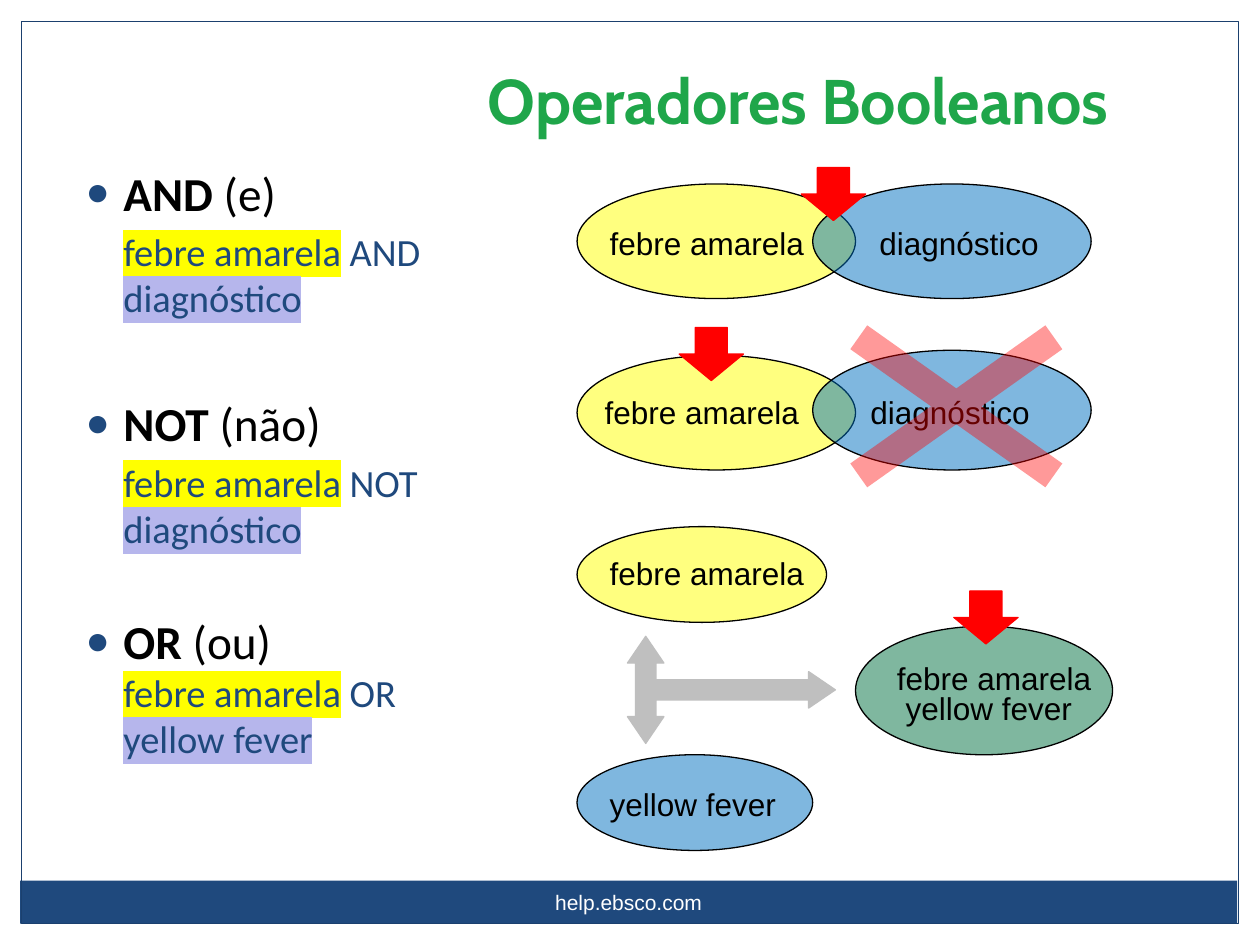
from typing import NamedTuple, Optional

from lxml.etree import SubElement
from pptx import Presentation
from pptx.dml.color import RGBColor
from pptx.enum.shapes import MSO_SHAPE as Preset
from pptx.enum.text import MSO_ANCHOR as Anchor, MSO_AUTO_SIZE as AutoSize, PP_ALIGN as Align
from pptx.oxml.ns import qn
from pptx.util import Emu, Pt

PX_PER_INCH = 100
YELLOW, BLUE, GREEN = "FFFF00", "0070C0", "7FB79F"
NAVY, RED, GREY, BLACK, WHITE = "1F497D", "FF0000", "BFBFBF", "000000", "FFFFFF"
LILAC = "B6B6EC"


class Figure(NamedTuple):
    preset: Preset
    box: tuple[int, int, int, int]
    fill: Optional[str]
    line: Optional[str]
    opacity: int = 100
    adjustments: tuple[float, ...] = ()
    rotation: int = 0


class Label(NamedTuple):
    text: str
    left: int
    top: int
    width: int


class Operator(NamedTuple):
    name: str
    meaning: str
    second_term: str
    gap_before: int
    example_gap: float
    break_before_second: bool


def px(length: int) -> Emu:
    return Emu(length * 914400 // PX_PER_INCH)


def rgb(color: str) -> RGBColor:
    return RGBColor.from_string(color)


def set_font(font, name: str, size: int, color: str) -> None:
    font.name, font.size = name, Pt(size)
    font.color.rgb = rgb(color)


def place(shape, box: tuple[int, int, int, int]) -> None:
    shape.left, shape.top, shape.width, shape.height = map(px, box)


def draw_figure(slide, figure: Figure):
    shape = slide.shapes.add_shape(figure.preset, *map(px, figure.box))
    shape.shadow.inherit = False
    shape.rotation = figure.rotation
    for index, value in enumerate(figure.adjustments):
        shape.adjustments[index] = value
    if figure.fill:
        shape.fill.solid()
        shape.fill.fore_color.rgb = rgb(figure.fill)
        if figure.opacity < 100:
            color = shape.fill._xPr.find(".//" + qn("a:srgbClr"))
            SubElement(color, qn("a:alpha"), val=str(figure.opacity * 1000))
    else:
        shape.fill.background()
    if figure.line:
        shape.line.color.rgb = rgb(figure.line)
        shape.line.width = Pt(0.75)
    else:
        shape.line.fill.background()
    return shape


def draw_label(slide, label: Label) -> None:
    box = slide.shapes.add_textbox(px(label.left), px(label.top), px(label.width), px(40))
    box.text_frame.word_wrap = False
    box.text_frame.auto_size = AutoSize.SHAPE_TO_FIT_TEXT
    paragraph = box.text_frame.paragraphs[0]
    paragraph.text = label.text
    set_font(paragraph.font, "Arial", 18, BLACK)


def format_item(paragraph, bulleted: bool, gap: float) -> None:
    properties = paragraph._p.get_or_add_pPr()
    properties.set("marL", str(px(30)))
    properties.set("indent", str(px(-30 if bulleted else 0)))
    if bulleted:
        SubElement(SubElement(properties, qn("a:buClr")), qn("a:srgbClr"), val=NAVY)
        SubElement(properties, qn("a:buSzPct"), val="85000")
        SubElement(properties, qn("a:buChar"), char="●")
    else:
        paragraph.level = 1
        SubElement(properties, qn("a:buNone"))
    paragraph.space_before = Pt(gap)
    set_font(paragraph.font, "Calibri", 27 if bulleted else 22, BLACK if bulleted else NAVY)


def add_run(paragraph, text: str, bold: bool = False, highlight: Optional[str] = None) -> None:
    run = paragraph.add_run()
    run.text = text
    run.font.bold = bold
    if highlight:
        mark = SubElement(run._r.get_or_add_rPr(), qn("a:highlight"))
        SubElement(mark, qn("a:srgbClr"), val=highlight)


def write_operator(frame, operator: Operator, first: bool) -> None:
    heading = frame.paragraphs[0] if first else frame.add_paragraph()
    format_item(heading, True, operator.gap_before)
    add_run(heading, operator.name, bold=True)
    add_run(heading, f" ({operator.meaning})")

    example = frame.add_paragraph()
    format_item(example, False, operator.example_gap)
    add_run(example, "febre amarela", highlight=YELLOW)
    add_run(example, f" {operator.name}" + ("" if operator.break_before_second else " "))
    if operator.break_before_second:
        example.add_line_break()
    add_run(example, operator.second_term, highlight=LILAC)


def ellipse(left: int, top: int, width: int, height: int, fill: str, opacity: int = 50) -> Figure:
    return Figure(Preset.OVAL, (left, top, width, height), fill, BLACK, opacity)


def red_arrow(left: int, top: int) -> Figure:
    return Figure(Preset.DOWN_ARROW, (left, top, 51, 42), RED, RED)


OPERATORS = [
    Operator("AND", "e", "diagnóstico", 0, 4.4, False),
    Operator("NOT", "não", "diagnóstico", 42, 4.4, True),
    Operator("OR", "ou", "yellow fever", 35, 0, True),
]
FRAME = Figure(Preset.RECTANGLE, (17, 17, 966, 716), None, "1B406E")
FOOTER = Figure(Preset.RECTANGLE, (16, 699, 966, 34), NAVY, None)
DIAGRAM = [
    ellipse(458, 146, 221, 91, YELLOW),
    ellipse(645, 146, 221, 91, BLUE),
    ellipse(458, 282, 221, 91, YELLOW),
    ellipse(645, 278, 221, 95, BLUE),
    ellipse(458, 418, 198, 76, YELLOW),
    ellipse(458, 599, 187, 76, BLUE),
    ellipse(679, 497, 204, 102, GREEN, 100),
    Figure(Preset.LEFT_RIGHT_UP_ARROW, (538, 465, 85, 165), GREY, GREY,
           adjustments=(0.19, 0.17, 0.25), rotation=90),
    red_arrow(636, 133),
    red_arrow(539, 260),
    red_arrow(757, 469),
]
LABELS = [
    Label("febre amarela", 474, 173, 183),
    Label("diagnóstico", 688, 173, 148),
    Label("febre amarela", 470, 307, 183),
    Label("diagnóstico", 681, 307, 148),
    Label("febre amarela", 474, 435, 183),
    Label("yellow fever", 474, 618, 153),
    Label("febre amarela", 702, 518, 183),
    Label("yellow fever", 709, 542, 153),
]
EXCLUSION_CROSS = Figure(Preset.MATH_MULTIPLY, (610, 217, 298, 211), RED, None, 40, (0.11,))


def main() -> None:
    deck = Presentation()
    deck.slide_width, deck.slide_height = px(1000), px(750)
    slide = deck.slides.add_slide(deck.slide_layouts[1])

    title, operators = slide.placeholders
    place(title, (278, 17, 711, 97))
    title.text_frame.vertical_anchor = Anchor.BOTTOM
    heading = title.text_frame.paragraphs[0]
    heading.text = "Operadores Booleanos"
    heading.alignment = Align.CENTER
    set_font(heading.font, "Cabin", 36, "1FA64A")
    heading.font.bold = True

    place(operators, (58, 125, 433, 570))
    operators.text_frame.auto_size = AutoSize.NONE
    for index, operator in enumerate(OPERATORS):
        write_operator(operators.text_frame, operator, first=index == 0)

    footer = draw_figure(slide, FOOTER).text_frame
    footer.word_wrap = False
    footer.vertical_anchor = Anchor.MIDDLE
    address = footer.paragraphs[0]
    address.text = "help.ebsco.com"
    address.alignment = Align.CENTER
    set_font(address.font, "Arial", 12, WHITE)

    draw_figure(slide, FRAME)
    for figure in DIAGRAM:
        draw_figure(slide, figure)
    for label in LABELS:
        draw_label(slide, label)
    draw_figure(slide, EXCLUSION_CROSS)

    deck.save("out.pptx")


if __name__ == "__main__":
    main()
